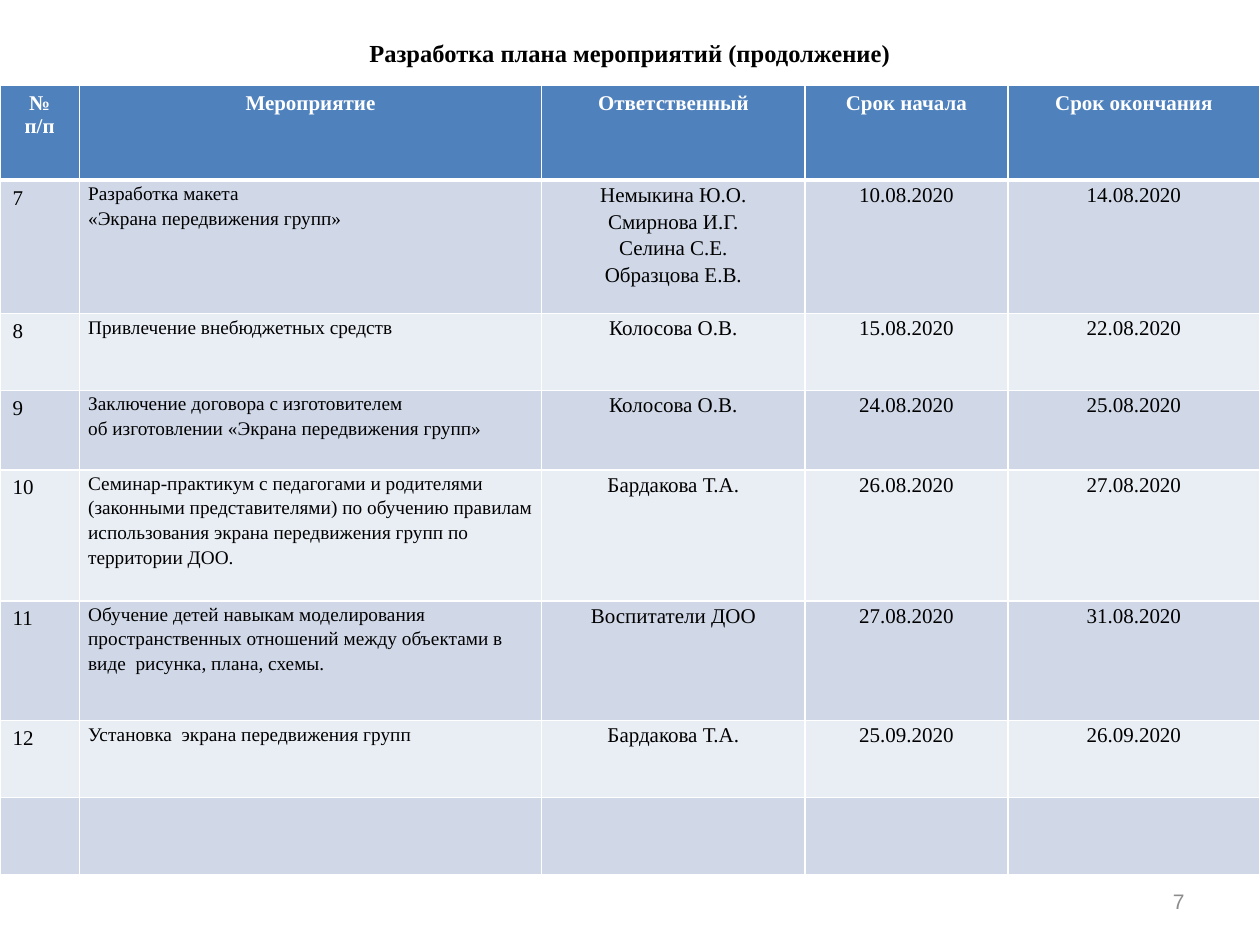
from lxml import etree
from pptx import Presentation
from pptx import util as u
from pptx.dml.color import RGBColor
from pptx.enum import text
from pptx.oxml import ns

THEME = {
    "serif": "Times New Roman", "sans": "Arial",
    "ink": "000000", "white": "FFFFFF", "muted": "8C8C8C",
    "header": "4F81BD", "bands": ("D0D8E8", "E9EDF4"),
    "title": 14, "body": 12, "small": 11,
}
LEFT, CENTER, RIGHT = text.PP_ALIGN.LEFT, text.PP_ALIGN.CENTER, text.PP_ALIGN.RIGHT


def write(frame, words, size=THEME["body"], font=THEME["serif"], color=THEME["ink"],
          bold=False, align=LEFT, spacing=None):
    frame.word_wrap = True
    for index, line in enumerate(words.split("\n")):
        para = frame.add_paragraph() if index else frame.paragraphs[0]
        para.alignment = align
        para.line_spacing = spacing
        span = para.add_run()
        span.text = line
        span.font.name = font
        span.font.size = u.Pt(size)
        span.font.bold = bold
        span.font.color.rgb = RGBColor.from_string(color)


def outline(cell, **widths):
    properties = cell._tc.get_or_add_tcPr()
    for index, (side, points) in enumerate(widths.items()):
        line = etree.Element(ns.qn(f"a:ln{side}"), w=str(u.Pt(points)))
        fill = etree.SubElement(line, ns.qn("a:solidFill"))
        etree.SubElement(fill, ns.qn("a:srgbClr"), val=THEME["white"])
        properties.insert(index, line)


deck = Presentation()
deck.slide_width, deck.slide_height = u.Inches(10), u.Inches(7.5)
page = deck.slides.add_slide(deck.slide_layouts[6])
wide, high = deck.slide_width, deck.slide_height

title = page.shapes.add_textbox(int(wide * 0.05), int(high * 0.04), int(wide * 0.9), int(high * 0.06))
title.text_frame.margin_top = 0
write(title.text_frame, "Разработка плана мероприятий (продолжение)",
      size=THEME["title"], bold=True, align=CENTER)

columns = [0.63, 3.67, 2.09, 1.61, 2]
rows = [0.75, 1.06, 0.61, 0.63, 1.04, 0.95, 0.61, 0.61]
plan = [
    ("№ п/п", "Мероприятие", "Ответственный", "Срок начала", "Срок окончания"),
    ("7", "Разработка макета\n«Экрана передвижения групп»",
     "Немыкина Ю.О.\nСмирнова И.Г.\nСелина С.Е.\nОбразцова Е.В.", "10.08.2020", "14.08.2020"),
    ("8", "Привлечение внебюджетных средств", "Колосова О.В.", "15.08.2020", "22.08.2020"),
    ("9", "Заключение договора с изготовителем\nоб изготовлении «Экрана передвижения групп»",
     "Колосова О.В.", "24.08.2020", "25.08.2020"),
    ("10", "Семинар-практикум с педагогами и родителями (законными представителями) по обучению "
     "правилам использования экрана передвижения групп по территории ДОО.",
     "Бардакова Т.А.", "26.08.2020", "27.08.2020"),
    ("11", "Обучение детей навыкам моделирования пространственных отношений между объектами "
     "в виде  рисунка, плана, схемы.", "Воспитатели ДОО", "27.08.2020", "31.08.2020"),
    ("12", "Установка  экрана передвижения групп", "Бардакова Т.А.", "25.09.2020", "26.09.2020"),
    ("",) * len(columns),
]
table = page.shapes.add_table(len(rows), len(columns), 0, u.Inches(0.68),
                              wide, u.Inches(sum(rows))).table
for column, width in zip(table.columns, columns):
    column.width = u.Inches(width)
for row, height in zip(table.rows, rows):
    row.height = u.Inches(height)

for r, entries in enumerate(plan):
    for c, words in enumerate(entries):
        cell = table.cell(r, c)
        cell.fill.solid()
        shade = THEME["bands"][(r - 1) % 2] if r else THEME["header"]
        cell.fill.fore_color.rgb = RGBColor.from_string(shade)
        outline(cell, L=1, R=1, T=3 if r == 1 else 1, B=1 if r else 3)
        if not words:
            continue
        if r == 0:
            write(cell.text_frame, words, color=THEME["white"], bold=True, align=CENTER)
        elif c == 0:
            write(cell.text_frame, words)
        else:
            cell.margin_left = cell.margin_right = u.Inches(0.07)
            cell.margin_top = cell.margin_bottom = 0
            write(cell.text_frame, words, size=THEME["small" if c == 1 else "body"],
                  align=LEFT if c == 1 else CENTER, spacing=1.15)

number = page.shapes.add_textbox(u.Inches(7.17), u.Inches(6.95), u.Inches(2.33), u.Inches(0.4))
number.text_frame.vertical_anchor = text.MSO_ANCHOR.MIDDLE
write(number.text_frame, "7", font=THEME["sans"], color=THEME["muted"], align=RIGHT)

deck.save("out.pptx")
